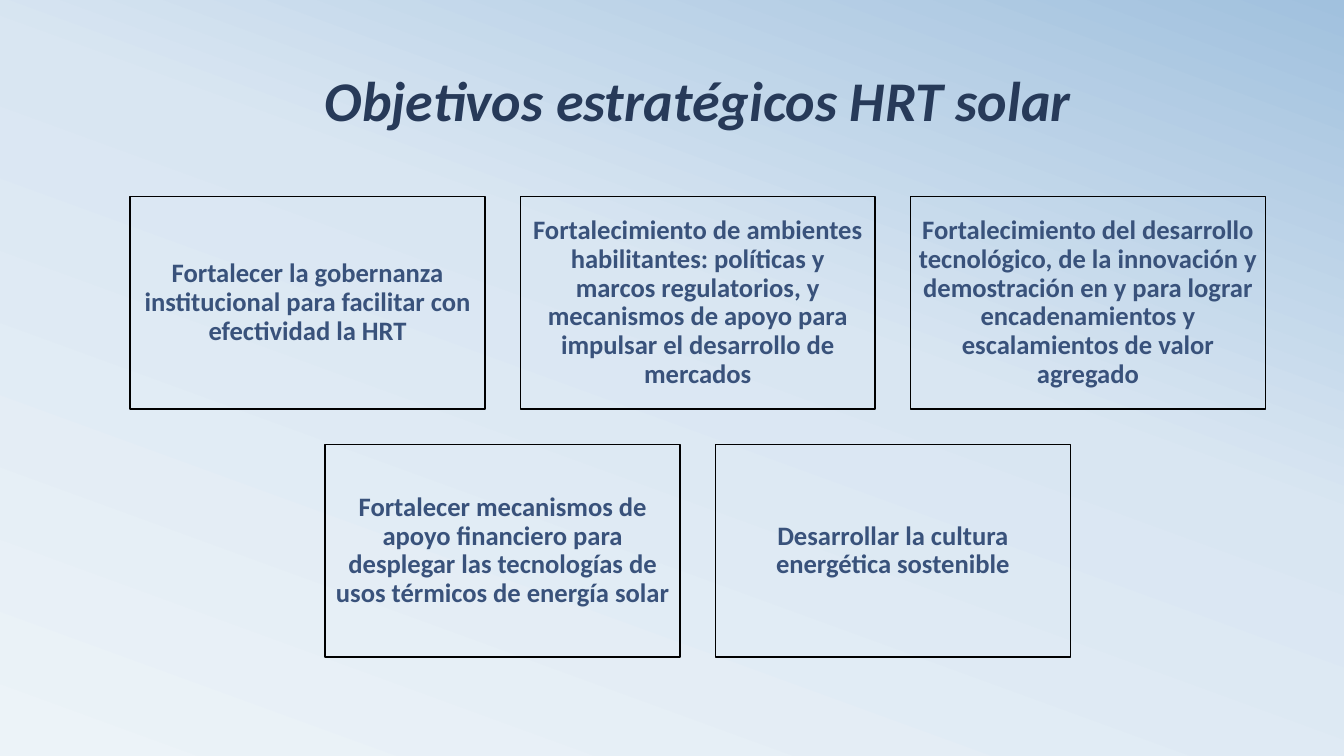
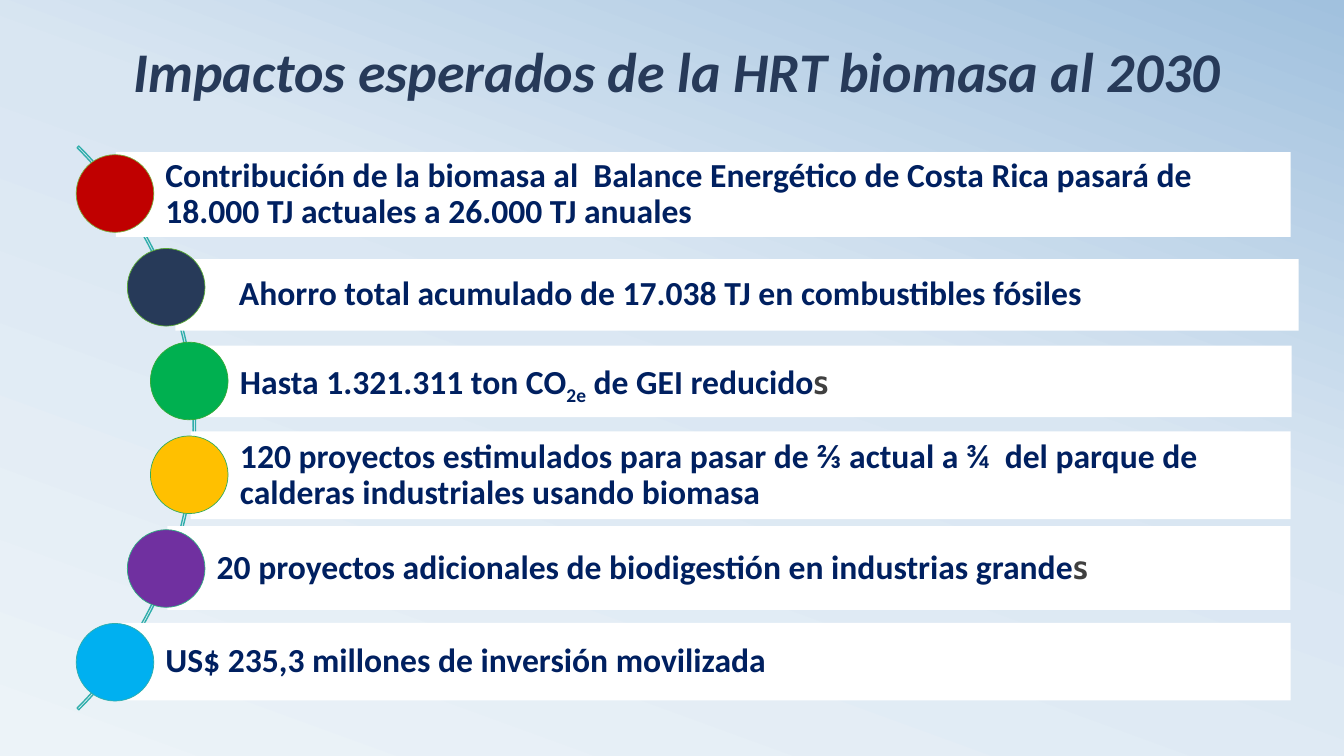
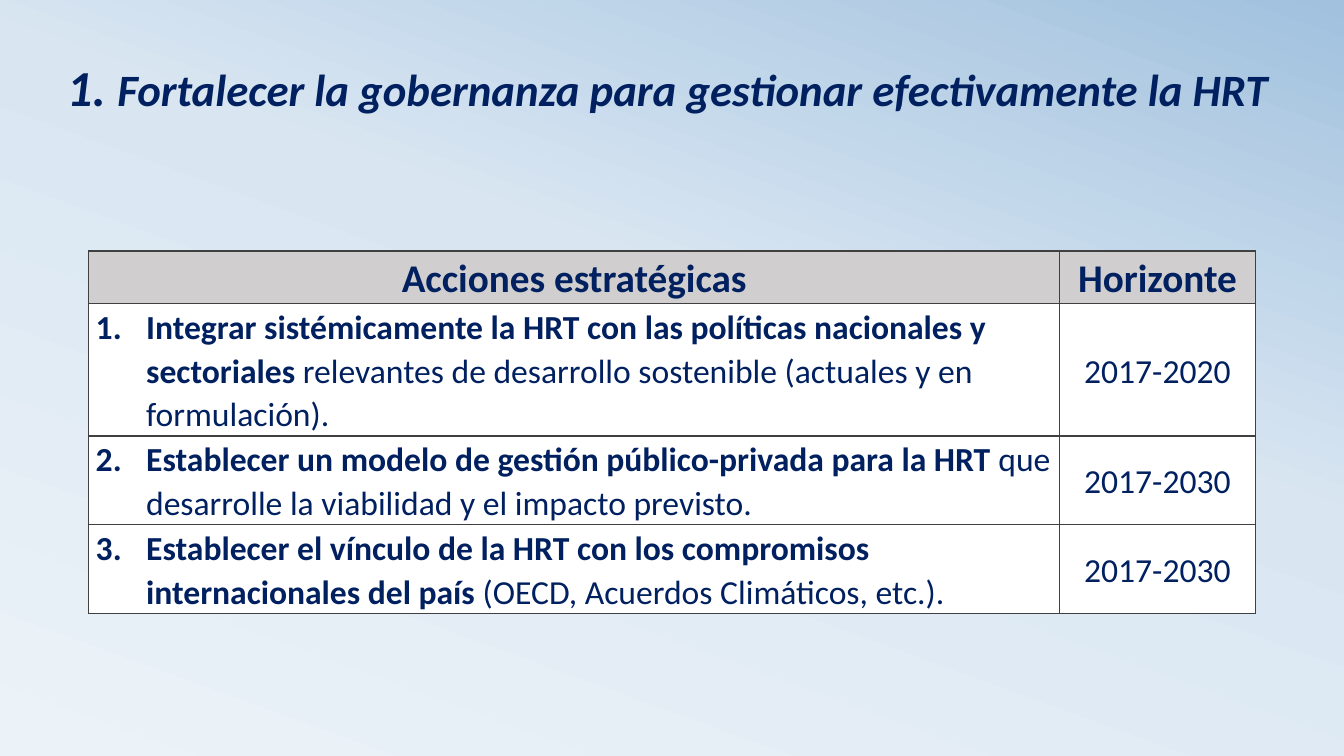
from copy import deepcopy
from math import sqrt

from lxml import etree
from pptx import Presentation
from pptx.dml.color import RGBColor
from pptx.enum.shapes import MSO_SHAPE
from pptx.enum.text import MSO_ANCHOR, MSO_AUTO_SIZE, PP_ALIGN
from pptx.oxml.ns import qn
from pptx.util import Inches, Pt

RECTANGLE, OVAL, BLOCK_ARC = MSO_SHAPE.RECTANGLE, MSO_SHAPE.OVAL, MSO_SHAPE.BLOCK_ARC
MIDDLE, BOTTOM = MSO_ANCHOR.MIDDLE, MSO_ANCHOR.BOTTOM
LEFT, CENTER = PP_ALIGN.LEFT, PP_ALIGN.CENTER
NO_AUTOFIT = MSO_AUTO_SIZE.NONE

COLORS = {
    "title": "273A59", "navy": "002060", "objective": "39527B", "gray": "404040",
    "black": "000000", "white": "FFFFFF", "header": "D0CECE", "arc": "30AEAB",
}
GRADIENT = [(0, "ECF3F8"), (0.58, "D9E6F2"), (1, "A1C1DE")]
TITLE_ONLY = 5

presentation = Presentation()
presentation.slide_width = Inches(13.33)
presentation.slide_height = Inches(7.5)

master = presentation.slide_master
background_fill = master.background.fill
background_fill.gradient()
background_fill.gradient_angle = 70
stop_list = master.element.find(".//" + qn("a:gsLst"))
stop_list.append(deepcopy(stop_list[0]))
for stop, (position, color) in zip(background_fill.gradient_stops, GRADIENT):
    stop.position = position
    stop.color.rgb = RGBColor.from_string(color)


def add_run(paragraph, text, size, color, bold=True, italic=False, font="Calibri"):
    run = paragraph.add_run()
    run.text = text
    run.font.name = font
    run.font.size = Pt(size)
    run.font.bold = bold
    run.font.italic = italic
    run.font.color.rgb = RGBColor.from_string(COLORS[color])
    return run


def add_titled_slide(left, top, width, height, title_runs):
    slide = presentation.slides.add_slide(presentation.slide_layouts[TITLE_ONLY])
    title = slide.shapes.title
    title.left, title.top = Inches(left), Inches(top)
    title.width, title.height = Inches(width), Inches(height)
    title.text_frame.auto_size = NO_AUTOFIT
    title.text_frame.vertical_anchor = BOTTOM
    paragraph = title.text_frame.paragraphs[0]
    paragraph.alignment = CENTER
    paragraph.line_spacing = 0.8
    for text, size, color in title_runs:
        add_run(paragraph, text, size, color, italic=True)
    return slide


slide = add_titled_slide(0.92, 0.19, 12, 1.17, [("Objetivos estratégicos HRT solar", 40, "title")])
OBJECTIVE_ROWS = [
    [
        "Fortalecer la gobernanza institucional para facilitar con efectividad la HRT",
        "Fortalecimiento de ambientes habilitantes: políticas y marcos regulatorios, y mecanismos de apoyo para impulsar el desarrollo de mercados",
        "Fortalecimiento del desarrollo tecnológico, de la innovación y demostración en y para lograr encadenamientos y escalamientos de valor agregado",
    ],
    [
        "Fortalecer mecanismos de apoyo financiero para desplegar las tecnologías de usos térmicos de energía solar",
        "Desarrollar la cultura energética sostenible",
    ],
]
BOX_WIDTH, BOX_HEIGHT, BOX_GAP = 3.52, 2.11, 0.35
GRID_CENTER, GRID_TOP = 6.92, 1.95

for row, objectives in enumerate(OBJECTIVE_ROWS):
    row_width = len(objectives) * (BOX_WIDTH + BOX_GAP) - BOX_GAP
    for column, objective in enumerate(objectives):
        left = GRID_CENTER - row_width / 2 + column * (BOX_WIDTH + BOX_GAP)
        top = GRID_TOP + row * (BOX_HEIGHT + BOX_GAP)
        box = slide.shapes.add_shape(
            RECTANGLE, Inches(left), Inches(top), Inches(BOX_WIDTH), Inches(BOX_HEIGHT))
        box.shadow.inherit = False
        box.fill.background()
        box.line.color.rgb = RGBColor.from_string(COLORS["black"])
        box.line.width = Pt(1)
        frame = box.text_frame
        frame.word_wrap = True
        frame.vertical_anchor = MIDDLE
        frame.margin_left = frame.margin_right = Inches(0.08)
        frame.margin_top = frame.margin_bottom = Inches(0.08)
        paragraph = frame.paragraphs[0]
        paragraph.alignment = CENTER
        paragraph.line_spacing = 0.9
        add_run(paragraph, objective, 19, "objective")


slide = add_titled_slide(
    0.61, 0.27, 12.21, 0.8, [("Impactos esperados de la HRT biomasa al 2030", 40, "title")])
ARC_LEFT, ARC_TOP, ARC_SIZE = -5.97, 0.29, 7.91
ARC_CENTER_X = ARC_LEFT + ARC_SIZE / 2
ARC_CENTER_Y = ARC_TOP + ARC_SIZE / 2
DOT_ORBIT, DOT_SIZE, DOT_STEP = 3.92, 0.77, 0.93

arc = slide.shapes.add_shape(
    BLOCK_ARC, Inches(ARC_LEFT), Inches(ARC_TOP), Inches(ARC_SIZE), Inches(ARC_SIZE))
arc.adjustments[0] = 189
arc.adjustments[1] = 27
arc.adjustments[2] = 0.003
arc.shadow.inherit = False
arc.fill.background()
arc.line.color.rgb = RGBColor.from_string(COLORS["arc"])
arc.line.width = Pt(1)

IMPACTS = [
    (1.15, 1.51, 11.65, 0.84, 0.49, "C00000", "7EA939",
     [("Contribución de la biomasa al  Balance Energético de Costa Rica pasará de 18.000 TJ actuales a 26.000 TJ anuales", "main")]),
    (1.74, 2.57, 11.14, 0.71, 0.63, "273A59", "59AA37",
     [("Ahorro total acumulado de 17.038 TJ en combustibles fósiles", "main")]),
    (1.89, 3.43, 10.92, 0.71, 0.49, "00B050", "35AB38",
     [("Hasta 1.321.311 ton CO", "main"), ("2e", "subscript"), (" de GEI reducido", "main"), ("s", "ending")]),
    (1.89, 4.28, 10.91, 0.87, 0.49, "FFC000", "34AC5C",
     [("120 proyectos estimulados para pasar de ⅔ actual a ¾  del parque de calderas industriales usando biomasa", "main")]),
    (1.66, 5.22, 11.14, 0.83, 0.49, "7030A0", "32AD83",
     [("20 proyectos adicionales de biodigestión en industrias grande", "main"), ("s", "ending")]),
    (1.15, 6.18, 11.65, 0.77, 0.49, "00B0F0", "30AEAB",
     [("US$ 235,3 millones de inversión movilizada", "main")]),
]

for index, (left, top, width, height, inset, dot_color, dot_line, runs) in enumerate(IMPACTS):
    bar = slide.shapes.add_shape(
        RECTANGLE, Inches(left), Inches(top), Inches(width), Inches(height))
    bar.shadow.inherit = False
    bar.fill.solid()
    bar.fill.fore_color.rgb = RGBColor.from_string(COLORS["white"])
    bar.line.fill.background()
    frame = bar.text_frame
    frame.word_wrap = True
    frame.vertical_anchor = MIDDLE
    frame.margin_left = Inches(inset)
    frame.margin_right = frame.margin_top = frame.margin_bottom = Inches(0.07)
    paragraph = frame.paragraphs[0]
    paragraph.alignment = LEFT
    paragraph.line_spacing = 0.9
    for text, style in runs:
        if style == "ending":
            add_run(paragraph, text, 25, "gray", font="Cabin")
        else:
            run = add_run(paragraph, text, 24, "navy")
            if style == "subscript":
                run.font._element.set("baseline", "-25000")

    offset_y = (index - (len(IMPACTS) - 1) / 2) * DOT_STEP
    offset_x = sqrt(DOT_ORBIT ** 2 - offset_y ** 2)
    dot = slide.shapes.add_shape(
        OVAL, Inches(ARC_CENTER_X + offset_x - DOT_SIZE / 2),
        Inches(ARC_CENTER_Y + offset_y - DOT_SIZE / 2), Inches(DOT_SIZE), Inches(DOT_SIZE))
    dot.shadow.inherit = False
    dot.fill.solid()
    dot.fill.fore_color.rgb = RGBColor.from_string(dot_color)
    dot.line.color.rgb = RGBColor.from_string(dot_line)
    dot.line.width = Pt(0.5)


slide = add_titled_slide(0.35, 0.52, 12.55, 0.68, [
    ("1. ", 36, "navy"),
    ("Fortalecer la gobernanza para gestionar efectivamente la HRT", 32, "navy"),
])
TABLE_ROWS = [
    ([("Acciones estratégicas", True)], "Horizonte"),
    ([("Integrar sistémicamente la HRT con las políticas nacionales y sectoriales ", True),
      ("relevantes de desarrollo sostenible (actuales y en formulación).", False)], "2017-2020"),
    ([("Establecer un modelo de gestión público-privada para la HRT ", True),
      ("que desarrolle la viabilidad y el impacto previsto.", False)], "2017-2030"),
    ([("Establecer el vínculo de la HRT con los compromisos internacionales del país", True),
      (" (OECD, Acuerdos Climáticos, etc.).", False)], "2017-2030"),
]
COLUMN_WIDTHS = [9.63, 1.94]
ROW_HEIGHTS = [0.52, 1.31, 0.88, 0.88]

table = slide.shapes.add_table(
    len(ROW_HEIGHTS), len(COLUMN_WIDTHS), Inches(0.88), Inches(2.49),
    Inches(sum(COLUMN_WIDTHS)), Inches(sum(ROW_HEIGHTS))).table
table.first_row = False
table.horz_banding = False
for column, width in zip(table.columns, COLUMN_WIDTHS):
    column.width = Inches(width)
for row, height in zip(table.rows, ROW_HEIGHTS):
    row.height = Inches(height)

for row_index, (action_runs, horizon) in enumerate(TABLE_ROWS):
    is_header = row_index == 0
    for column_index, runs in enumerate([action_runs, [(horizon, is_header)]]):
        cell = table.cell(row_index, column_index)
        cell.fill.solid()
        cell.fill.fore_color.rgb = RGBColor.from_string(COLORS["header" if is_header else "white"])
        cell.vertical_anchor = MIDDLE
        cell.margin_left = cell.margin_right = Inches(0.05 if is_header and column_index else 0.07)
        cell.margin_top, cell.margin_bottom = Inches(0.01), 0
        paragraph = cell.text_frame.paragraphs[0]
        paragraph.line_spacing = 1.07
        paragraph.space_after = Pt(8)
        is_numbered = column_index == 0 and not is_header
        paragraph.alignment = LEFT if is_numbered else CENTER
        if is_numbered:
            properties = paragraph._p.get_or_add_pPr()
            properties.set("marL", str(Inches(0.5)))
            properties.set("indent", str(-Inches(0.5)))
            etree.SubElement(
                properties, qn("a:buAutoNum"), type="arabicPeriod", startAt=str(row_index))
        for text, bold in runs:
            add_run(paragraph, text, 28 if is_header else 24, "navy", bold)

        cell_properties = cell._tc.get_or_add_tcPr()
        for position, side in enumerate(["a:lnL", "a:lnR", "a:lnT", "a:lnB"]):
            border = etree.Element(qn(side), w=str(Pt(1)))
            border_fill = etree.SubElement(border, qn("a:solidFill"))
            etree.SubElement(border_fill, qn("a:srgbClr"), val=COLORS["gray"])
            cell_properties.insert(position, border)

presentation.save("out.pptx")
